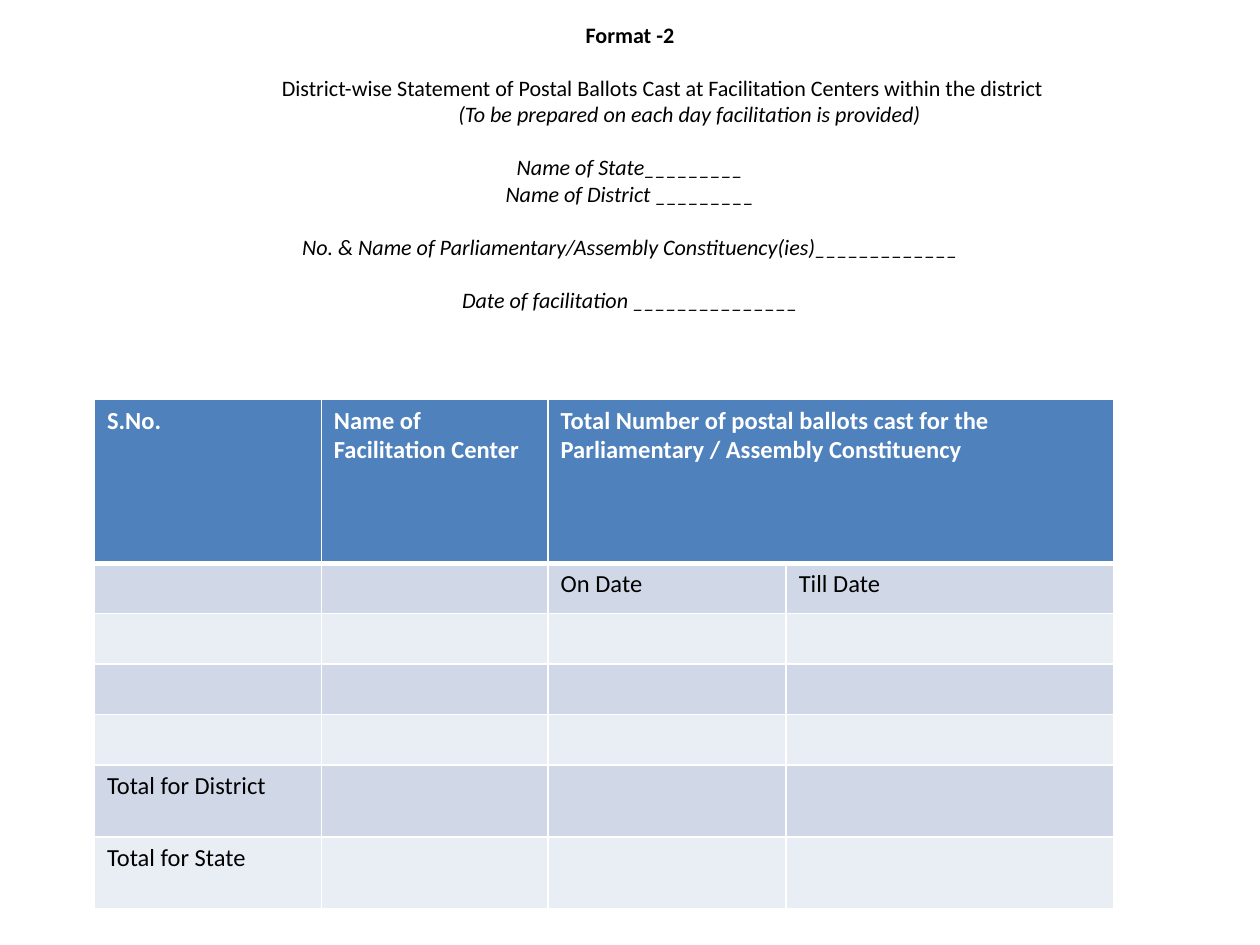
from lxml import etree
from pptx import Presentation
from pptx import util as u
from pptx.dml.color import RGBColor
from pptx.enum import text
from pptx.oxml.ns import qn

COLORS = {"ink": "000000", "paper": "FFFFFF", "head": "4F81BD",
          "dark_band": "D0D8E8", "light_band": "E9EDF4"}
LINE = 15.14
HEADING = [
    ("Format -2", {"bold": True}, 0, 1),
    ("District-wise Statement of Postal Ballots Cast at Facilitation Centers "
     "within the district", {}, 0.51, 0),
    ("(To be prepared on each day facilitation is provided)", {"italic": True}, 0.94, 1),
    ("Name of State_________", {"italic": True}, 0, 0),
    ("Name of District _________", {"italic": True}, 0, 1),
    ("No. & Name of Parliamentary/Assembly Constituency(ies)_____________",
     {"italic": True}, 0, 1),
    ("Date of facilitation _______________", {"italic": True}, 0, 0),
]
COLUMNS = [1.8, 1.8, 1.89, 2.6]
ROWS = [1.3] + [0.4] * 4 + [0.57] * 2
CELLS = {
    (0, 0): "S.No.",
    (0, 1): "Name of Facilitation Center",
    (0, 2): "Total Number of postal ballots cast for the "
            "Parliamentary / Assembly Constituency",
    (1, 2): "On Date",
    (1, 3): "Till Date",
    (5, 0): "Total for District",
    (6, 0): "Total for State",
}


class Deck:
    """Holds the text style and the current slide."""

    def __init__(self, slide, font="Calibri"):
        self.s, self.font = slide, font

    def run(self, p, words, size, color="ink", **fmt):
        r = p.add_run()
        r.text = words
        style = {"name": self.font, "size": u.Pt(size), "bold": False, **fmt}
        for key, value in style.items():
            setattr(r.font, key, value)
        r.font.color.rgb = RGBColor.from_string(COLORS[color])

    def heading(self, box, lines):
        tf = self.s.shapes.add_textbox(*map(u.Inches, box)).text_frame
        frame = {"word_wrap": True, "margin_top": 0, "margin_bottom": 0,
                 "vertical_anchor": text.MSO_ANCHOR.TOP}
        for key, value in frame.items():
            setattr(tf, key, value)
        for i, (words, fmt, indent, gap) in enumerate(lines):
            p = tf.add_paragraph() if i else tf.paragraphs[0]
            layout = {"alignment": text.PP_ALIGN.CENTER, "line_spacing": u.Pt(LINE),
                      "space_after": u.Pt(LINE * gap)}
            for key, value in layout.items():
                setattr(p, key, value)
            if indent:
                p._p.get_or_add_pPr().set("marL", str(u.Inches(indent)))
            self.run(p, words, 12.6, **fmt)

    def borders(self, cell, **widths):
        tcPr = cell._tc.get_or_add_tcPr()
        for side in "LRTB":
            ln = etree.SubElement(tcPr, qn(f"a:ln{side}"), w=str(u.Pt(widths.get(side, 1))))
            fill = etree.SubElement(ln, qn("a:solidFill"))
            etree.SubElement(fill, qn("a:srgbClr"), val=COLORS["paper"])

    def table(self, box, columns, rows, words):
        tbl = self.s.shapes.add_table(len(rows), len(columns), *map(u.Inches, box)).table
        tbl.horz_banding = False
        for column, width in zip(tbl.columns, columns):
            column.width = u.Inches(width)
        for i, (row, height) in enumerate(zip(tbl.rows, rows)):
            row.height = u.Inches(height)
            band = "head" if i == 0 else "dark_band" if i % 2 else "light_band"
            for j, cell in enumerate(row.cells):
                self.borders(cell, B=1 if i else 3, T=3 if i == 1 else 1)
                cell.fill.solid()
                cell.fill.fore_color.rgb = RGBColor.from_string(COLORS[band])
                if (i, j) in words:
                    self.run(cell.text_frame.paragraphs[0], words[i, j], 14,
                             "ink" if i else "paper", bold=i == 0)
        return tbl


def main():
    prs = Presentation()
    prs.slide_width, prs.slide_height = u.Inches(10), u.Inches(7.5)
    deck = Deck(prs.slides.add_slide(prs.slide_layouts[6]))
    deck.heading((0.5, 0.17, 9, 2.5), HEADING)
    tbl = deck.table((0.75, 3.17, sum(COLUMNS), sum(ROWS)), COLUMNS, ROWS, CELLS)
    tbl.cell(0, 2).merge(tbl.cell(0, 3))
    prs.save("out.pptx")


if __name__ == "__main__":
    main()
